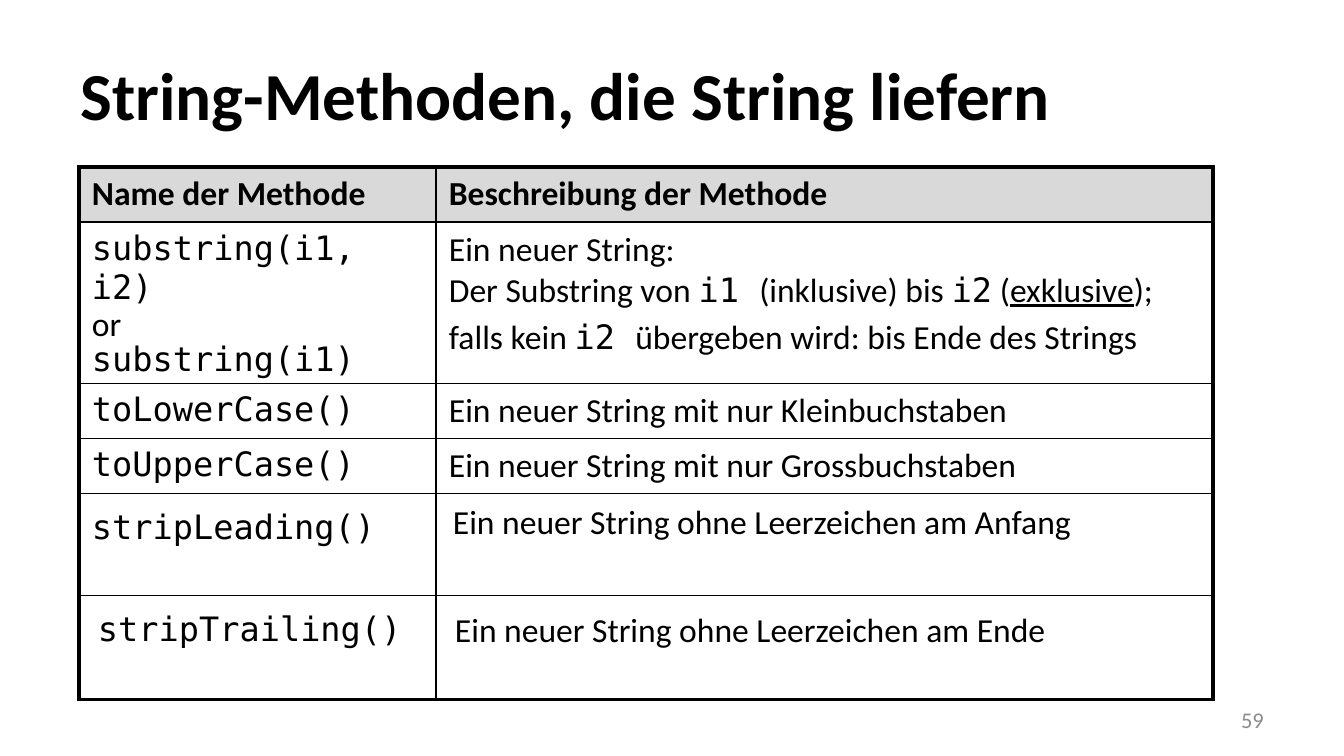
import pptx
import pptx.util
import pptx.dml.color
import pptx.enum.text
import lxml.etree

# Content: a cell is a list of paragraphs, a paragraph a list of (text, style)
TITLE = "String-Methoden, die String liefern"
PAGE = "59"
BODY, CODE = "Calibri", "DejaVu Sans Mono"
PLAIN, HEAD = {}, {"bold": True}
MONO, LINE = {"font": CODE}, {"under": True}
BREAK = "\n"
ROWS = [
    ([[("Name der Methode", HEAD)]], [[("Beschreibung der Methode", HEAD)]]),
    ([[("substring(i1, i2)", MONO)], [("or", PLAIN)],
      [("substring(i1)", MONO)]],
     [[("Ein neuer String: ", PLAIN), (BREAK, PLAIN),
       ("Der Substring von ", PLAIN), ("i1 ", MONO),
       ("(inklusive) bis ", PLAIN), ("i2", MONO), (" (", PLAIN),
       ("exklusive", LINE), (");", PLAIN)],
      [("falls kein ", PLAIN), ("i2 ", MONO),
       ("übergeben wird: bis Ende des Strings", PLAIN)]]),
    ([[("toLowerCase()", MONO)]],
     [[("Ein neuer String mit nur Kleinbuchstaben", PLAIN)]]),
    ([[("toUpperCase()", MONO)]],
     [[("Ein neuer String mit nur Grossbuchstaben", PLAIN)]]),
    ([[("stripLeading()", MONO)]],
     [[("Ein neuer String ohne Leerzeichen am Anfang", PLAIN)]]),
    ([[("stripTrailing()", MONO)]],
     [[("Ein neuer String ohne Leerzeichen am Ende", PLAIN)]]),
]

# Layout in px
WIDTHS = [357, 777]
HEIGHTS = [55, 148, 55, 55, 102, 104]
LEFT, TOP = 79, 167
INSET = (13, 7, 13, 7)
INSETS = {(4, 0): (13, 15, 5, 5), (4, 1): (17, 9, 17, 9),
          (5, 0): (19, 15, 17, 5), (5, 1): (19, 15, 17, 5)}
LOOSE = 4  # first row without space before paragraphs
THIN, THICK = 1, 2.25


def px(n):
    return pptx.util.Emu(round(n * 914400 / 134.4))


def color(text):
    return pptx.dml.color.RGBColor.from_string(text)


def write(para, text, font=BODY, size=18, ink="000000", bold=False, under=False):
    if text == BREAK:
        para.add_line_break()
        return
    run = para.add_run()
    run.text = text
    run.font.name = font
    run.font.size = pptx.util.Pt(size)
    run.font.bold = bold
    run.font.underline = under
    run.font.color.rgb = color(ink)


def pad(box, inset):
    (box.margin_left, box.margin_top,
     box.margin_right, box.margin_bottom) = map(px, inset)


def border(cell, side, width):
    ns = "http://schemas.openxmlformats.org/drawingml/2006/main"
    props = cell._tc.get_or_add_tcPr()
    line = lxml.etree.SubElement(props, f"{{{ns}}}ln{side}",
                                 w=str(pptx.util.Pt(width)))
    fill = lxml.etree.SubElement(line, f"{{{ns}}}solidFill")
    lxml.etree.SubElement(fill, f"{{{ns}}}srgbClr", val="000000")


deck = pptx.Presentation()
deck.slide_width, deck.slide_height = px(1344), px(756)
slide = deck.slides.add_slide(deck.slide_layouts[5])

# Title
title = slide.shapes.title
title.left, title.top, title.width, title.height = map(px, (67, 31, 1210, 126))
frame = title.text_frame
frame.vertical_anchor = pptx.enum.text.MSO_ANCHOR.MIDDLE
frame.paragraphs[0].alignment = pptx.enum.text.PP_ALIGN.LEFT
write(frame.paragraphs[0], TITLE, size=36, bold=True)

# Table
table = slide.shapes.add_table(
    len(ROWS), len(WIDTHS), px(LEFT), px(TOP),
    px(sum(WIDTHS)), px(sum(HEIGHTS))).table
table.first_row = table.horz_banding = False
for col, width in zip(table.columns, WIDTHS):
    col.width = px(width)
for row, height in zip(table.rows, HEIGHTS):
    row.height = px(height)

for r, row in enumerate(ROWS):
    for c, paras in enumerate(row):
        cell = table.cell(r, c)
        pad(cell, INSETS.get((r, c), INSET))

        # Thick lines on the outside, thin ones within
        outer = {"L": c == 0, "R": c == len(WIDTHS) - 1,
                 "T": r == 0, "B": r == len(ROWS) - 1}
        for side, edge in outer.items():
            border(cell, side, THICK if edge else THIN)
        if r == 0:
            cell.fill.solid()
            cell.fill.fore_color.rgb = color("D9D9D9")
        else:
            cell.fill.background()

        for i, runs in enumerate(paras):
            frame = cell.text_frame
            para = frame.add_paragraph() if i else frame.paragraphs[0]
            if r < LOOSE:
                para.space_before = pptx.util.Pt(3.6)
            if i and c == 0:
                para.line_spacing = 0.7
            for text, style in runs:
                write(para, text, **style)

# Page number
page = slide.shapes.add_textbox(*map(px, (964, 700, 313, 40))).text_frame
page.word_wrap = True
page.vertical_anchor = pptx.enum.text.MSO_ANCHOR.MIDDLE
page.paragraphs[0].alignment = pptx.enum.text.PP_ALIGN.RIGHT
write(page.paragraphs[0], PAGE, size=12, ink="8C8C8C")

deck.save("out.pptx")
